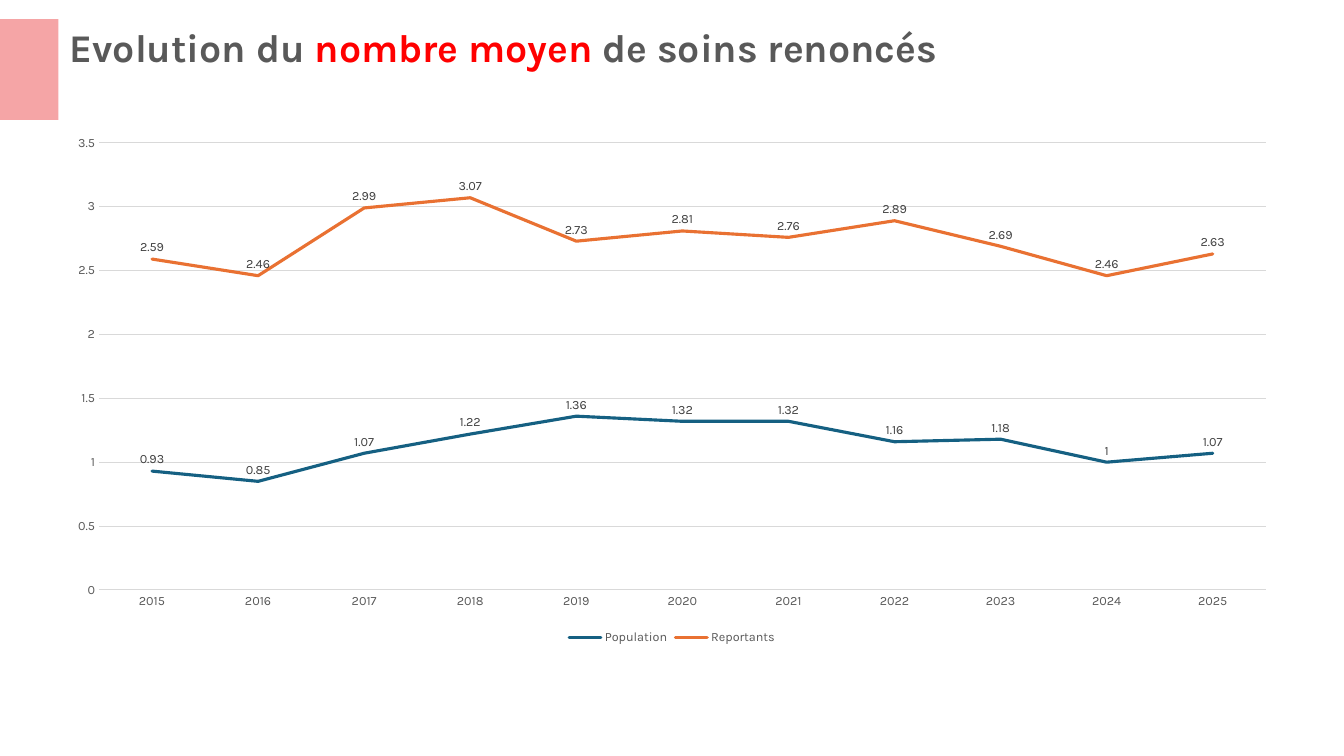
from dataclasses import dataclass

from lxml.etree import SubElement
from pptx import Presentation
from pptx.chart.data import CategoryChartData
from pptx.dml.color import RGBColor
from pptx.enum.chart import XL_CHART_TYPE, XL_LABEL_POSITION, XL_LEGEND_POSITION, XL_TICK_MARK
from pptx.enum.shapes import MSO_SHAPE
from pptx.enum.text import MSO_ANCHOR, PP_ALIGN
from pptx.oxml.ns import qn
from pptx.util import Inches, Pt


@dataclass(frozen=True)
class Theme:
    """Colours, font and type sizes of the slide."""
    font: str = "Karla"
    grey: str = "595959"
    label: str = "404040"
    grid: str = "D9D9D9"
    highlight: str = "FF0000"
    accent: str = "E51517"
    population: str = "156082"
    reportants: str = "E97132"
    title_size: float = 28
    chart_size: float = 9
    line_width: float = 2.25
    grid_width: float = 0.75


THEME = Theme()
YEARS = [str(year) for year in range(2015, 2026)]
SERIES = [
    ("Population", THEME.population,
     [0.93, 0.85, 1.07, 1.22, 1.36, 1.32, 1.32, 1.16, 1.18, 1, 1.07]),
    ("Reportants", THEME.reportants,
     [2.59, 2.46, 2.99, 3.07, 2.73, 2.81, 2.76, 2.89, 2.69, 2.46, 2.63]),
]
HEADING = [
    ("Evolution du ", THEME.grey),
    ("nombre moyen", THEME.highlight),
    (" de soins renoncés", THEME.grey),
]


def apply(target, values):
    """Set each named attribute on the target."""
    for name, value in values.items():
        setattr(target, name, value)


def style_font(font, size, color, bold=False):
    """Give a font the theme typeface with a size and colour."""
    apply(font, {"name": THEME.font, "size": Pt(size), "bold": bold})
    font.color.rgb = RGBColor.from_string(color)


def style_line(line, color, width):
    """Give a line its colour and width in points."""
    line.color.rgb = RGBColor.from_string(color)
    line.width = Pt(width)


def place_heading(slide, left, top, width, height):
    """Place the title with its highlighted words in the given box."""
    heading = slide.shapes.title
    apply(heading, {"left": left, "top": top, "width": width, "height": height})
    frame = heading.text_frame
    apply(frame, {"word_wrap": True, "vertical_anchor": MSO_ANCHOR.MIDDLE})
    paragraph = frame.paragraphs[0]
    apply(paragraph, {"alignment": PP_ALIGN.LEFT, "line_spacing": 0.9})
    for words, color in HEADING:
        run = paragraph.add_run()
        run.text = words
        style_font(run.font, THEME.title_size, color, bold=True)


def place_trend(slide, left, top, width, height):
    """Place the line chart of both series in the given box."""
    data = CategoryChartData()
    data.categories = YEARS
    for name, _, values in SERIES:
        data.add_series(name, values)
    trend = slide.shapes.add_chart(XL_CHART_TYPE.LINE, left, top, width, height, data).chart
    apply(trend, {"has_title": False, "has_legend": True})
    style_font(trend.font, THEME.chart_size, THEME.grey)
    apply(trend.legend, {"position": XL_LEGEND_POSITION.BOTTOM, "include_in_layout": False})
    style_font(trend.legend.font, THEME.chart_size, THEME.grey)

    years, scale = trend.category_axis, trend.value_axis
    for axis in (years, scale):
        apply(axis, {"major_tick_mark": XL_TICK_MARK.NONE, "minor_tick_mark": XL_TICK_MARK.NONE})
        style_font(axis.tick_labels.font, THEME.chart_size, THEME.grey)
    apply(scale, {"minimum_scale": 0, "maximum_scale": 3.5, "major_unit": 0.5,
                  "has_major_gridlines": True})
    style_line(years.format.line, THEME.grid, THEME.grid_width)
    style_line(scale.major_gridlines.format.line, THEME.grid, THEME.grid_width)
    scale.format.line.fill.background()

    trend.plots[0].vary_by_categories = False
    for series, (_, color, _) in zip(trend.plots[0].series, SERIES):
        series.smooth = False
        style_line(series.format.line, color, THEME.line_width)
        series.format.line._get_or_add_ln().set("cap", "rnd")
        labels = series.data_labels
        apply(labels, {"show_value": True, "position": XL_LABEL_POSITION.ABOVE})
        style_font(labels.font, THEME.chart_size, THEME.label)


def place_accent(slide, left, top, width, height):
    """Place the translucent block beside the title in the given box."""
    accent = slide.shapes.add_shape(MSO_SHAPE.RECTANGLE, left, top, width, height)
    accent.shadow.inherit = False
    accent.line.fill.background()
    accent.fill.solid()
    accent.fill.fore_color.rgb = RGBColor.from_string(THEME.accent)
    color = accent.fill._xPr.find(qn("a:solidFill"))[0]
    SubElement(color, qn("a:alpha")).set("val", "38000")


def main():
    """Build the slide and save it."""
    deck = Presentation()
    apply(deck, {"slide_width": Inches(13.33), "slide_height": Inches(7.5)})
    slide = deck.slides.add_slide(deck.slide_layouts[5])
    place_heading(slide, Inches(0.59), Inches(-0.13), Inches(11.5), Inches(1.24))
    place_trend(slide, Inches(0.53), Inches(1.24), Inches(12.27), Inches(5.2))
    place_accent(slide, Inches(0), Inches(0.19), Inches(0.58), Inches(1))
    deck.save("out.pptx")


if __name__ == "__main__":
    main()
